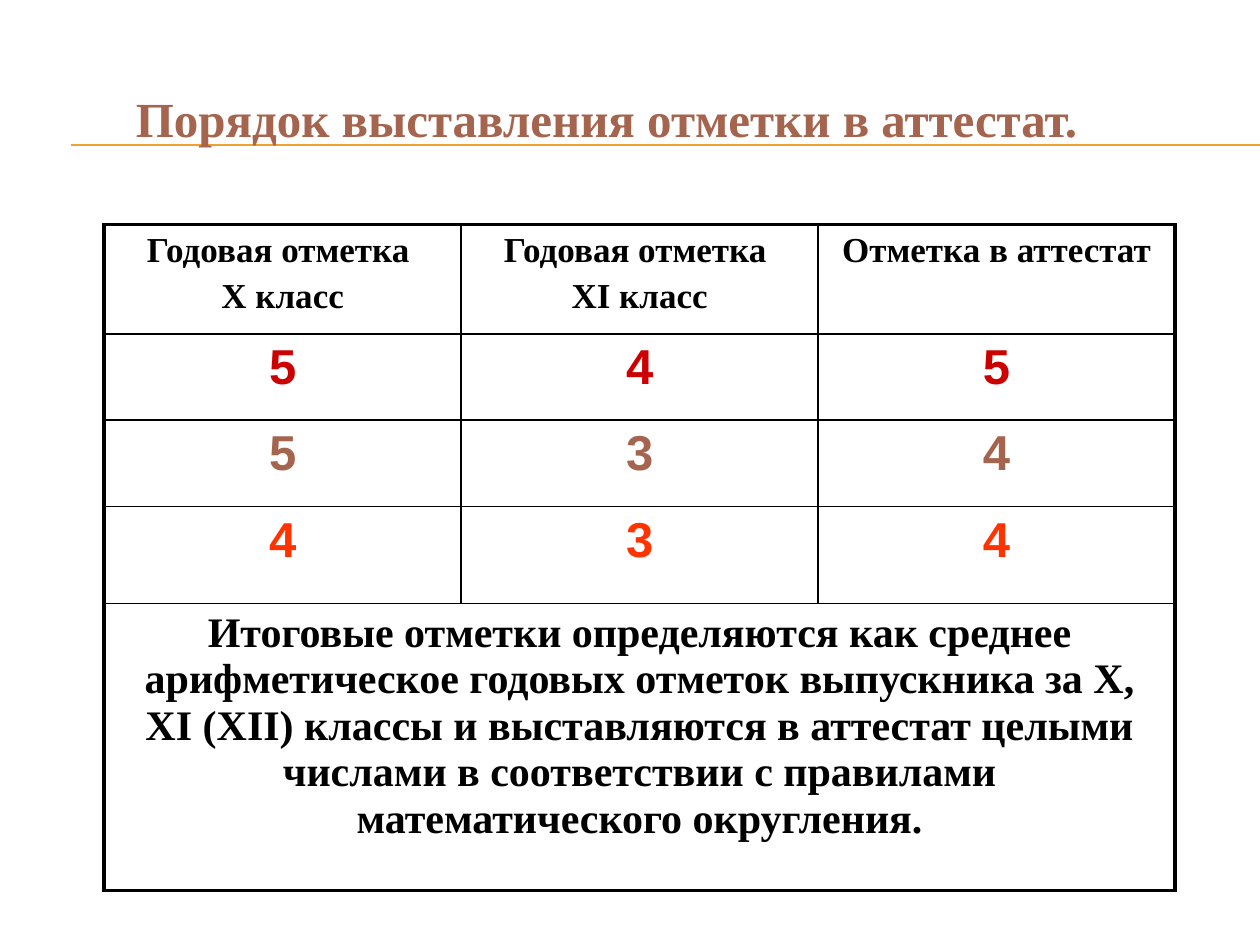
from lxml import etree
from pptx import Presentation
from pptx import util as u
from pptx.dml.color import RGBColor
from pptx.enum import shapes, text
from pptx.oxml import ns

BLACK = RGBColor(0x00, 0x00, 0x00)
BROWN = RGBColor(0xA5, 0x64, 0x4E)
GOLD = RGBColor(0xF0, 0xA2, 0x2E)
RED = RGBColor(0xCC, 0x00, 0x00)
ORANGE = RGBColor(0xFF, 0x33, 0x00)
SERIF, SANS = "Times New Roman", "Arial"
OUTER, INNER = u.Pt(2.25), u.Pt(1)

HEADERS = [
    ["Годовая отметка ", "X класс"],
    ["Годовая отметка ", "XI класс"],
    ["Отметка в аттестат"],
]
MARKS = [("545", RED), ("534", BROWN), ("434", ORANGE)]
RULE = (
    "Итоговые отметки определяются как среднее арифметическое годовых отметок "
    "выпускника за X, XI (XII) классы и выставляются в аттестат целыми числами "
    "в соответствии с правилами математического округления."
)
ROW_HEIGHTS = [u.Cm(2.2), u.Cm(1.74), u.Cm(1.74), u.Cm(1.96), u.Cm(5.78)]


def add_bold_run(paragraph, words, size, font_name, color):
    run = paragraph.add_run()
    run.text = words
    run.font.size = u.Pt(size)
    run.font.name = font_name
    run.font.bold = True
    run.font.color.rgb = color


def add_underline(slide, left, top, width):
    line = slide.shapes.add_connector(
        shapes.MSO_CONNECTOR.STRAIGHT, left, top, left + width, top)
    line.line.color.rgb = GOLD
    line.line.width = u.Pt(0.75)
    etree.SubElement(line._element.spPr, ns.qn("a:effectLst"))


def add_title(slide, left, top, width, height):
    box = slide.shapes.add_textbox(left, top, width, height)
    frame = box.text_frame
    frame.word_wrap = True
    frame.vertical_anchor = text.MSO_ANCHOR.MIDDLE
    add_bold_run(frame.paragraphs[0], "Порядок выставления отметки в аттестат.",
                 28, SERIF, BROWN)


def fill_cell(cell, lines, size, font_name, color):
    frame = cell.text_frame
    for index, words in enumerate(lines):
        paragraph = frame.add_paragraph() if index else frame.paragraphs[0]
        paragraph.alignment = text.PP_ALIGN.CENTER
        paragraph.space_before = u.Pt(size * 0.2)
        add_bold_run(paragraph, words, size, font_name, color)


def set_borders(cell, widths):
    """Draw black borders; widths maps the sides L, R, T and B to line widths."""
    properties = cell._tc.get_or_add_tcPr()
    for side, width in widths.items():
        border = etree.SubElement(properties, ns.qn(f"a:ln{side}"), w=str(width))
        fill = etree.SubElement(border, ns.qn("a:solidFill"))
        etree.SubElement(fill, ns.qn("a:srgbClr"), val=str(BLACK))


def style_grid(table):
    """Give the outer edge a thick line, the inner grid a thin one, and no fill."""
    last_row, last_column = len(table.rows) - 1, len(table.columns) - 1
    for row in range(last_row + 1):
        for column in range(last_column + 1):
            cell = table.cell(row, column)
            if cell.is_spanned:
                continue
            right_column = column + cell.span_width - 1
            set_borders(cell, {
                "L": OUTER if column == 0 else INNER,
                "R": OUTER if right_column == last_column else INNER,
                "T": OUTER if row == 0 else INNER,
                "B": OUTER if row == last_row else INNER,
            })
            cell.fill.background()


def add_marks_table(slide, left, top, width):
    table = slide.shapes.add_table(
        len(ROW_HEIGHTS), len(HEADERS), left, top, width, sum(ROW_HEIGHTS)).table
    table.first_row = table.horz_banding = False
    for row, height in zip(table.rows, ROW_HEIGHTS):
        row.height = height

    for column, lines in enumerate(HEADERS):
        fill_cell(table.cell(0, column), lines, 20, SERIF, BLACK)
    for row, (marks, color) in enumerate(MARKS, start=1):
        for column, mark in enumerate(marks):
            fill_cell(table.cell(row, column), [mark], 28, SANS, color)

    last_row = len(ROW_HEIGHTS) - 1
    rule_cell = table.cell(last_row, 0)
    rule_cell.merge(table.cell(last_row, len(HEADERS) - 1))
    fill_cell(rule_cell, [RULE], 24, SERIF, BLACK)
    style_grid(table)


def main():
    presentation = Presentation()
    presentation.slide_width, presentation.slide_height = u.Cm(25.4), u.Cm(19.05)
    slide = presentation.slides.add_slide(presentation.slide_layouts[6])
    for top in (u.Cm(2.92), u.Cm(2.94)):
        add_underline(slide, u.Cm(1.43), top, u.Cm(23.97))
    add_title(slide, u.Cm(2.49), u.Cm(0.33), u.Cm(24), u.Cm(4.09))
    add_marks_table(slide, u.Cm(2.1), u.Cm(4.53), u.Cm(21.59))
    presentation.save("out.pptx")


if __name__ == "__main__":
    main()
